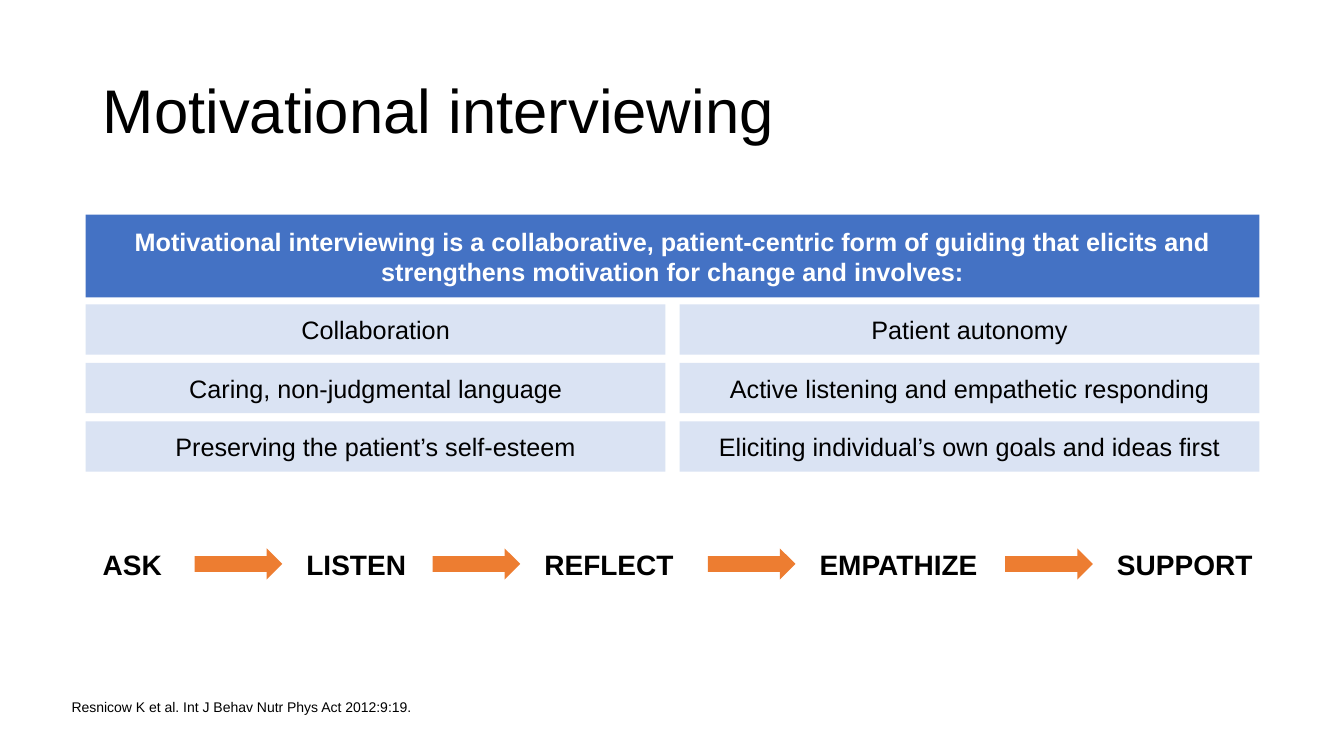
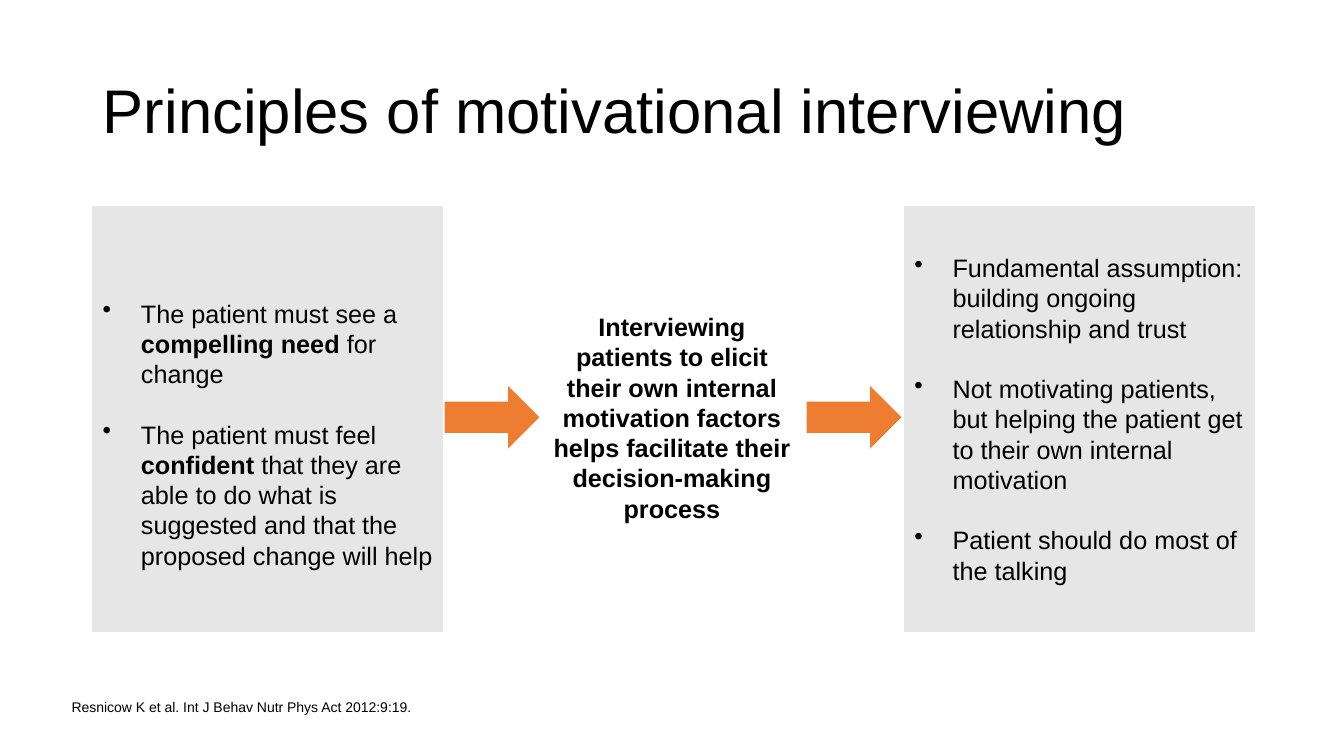
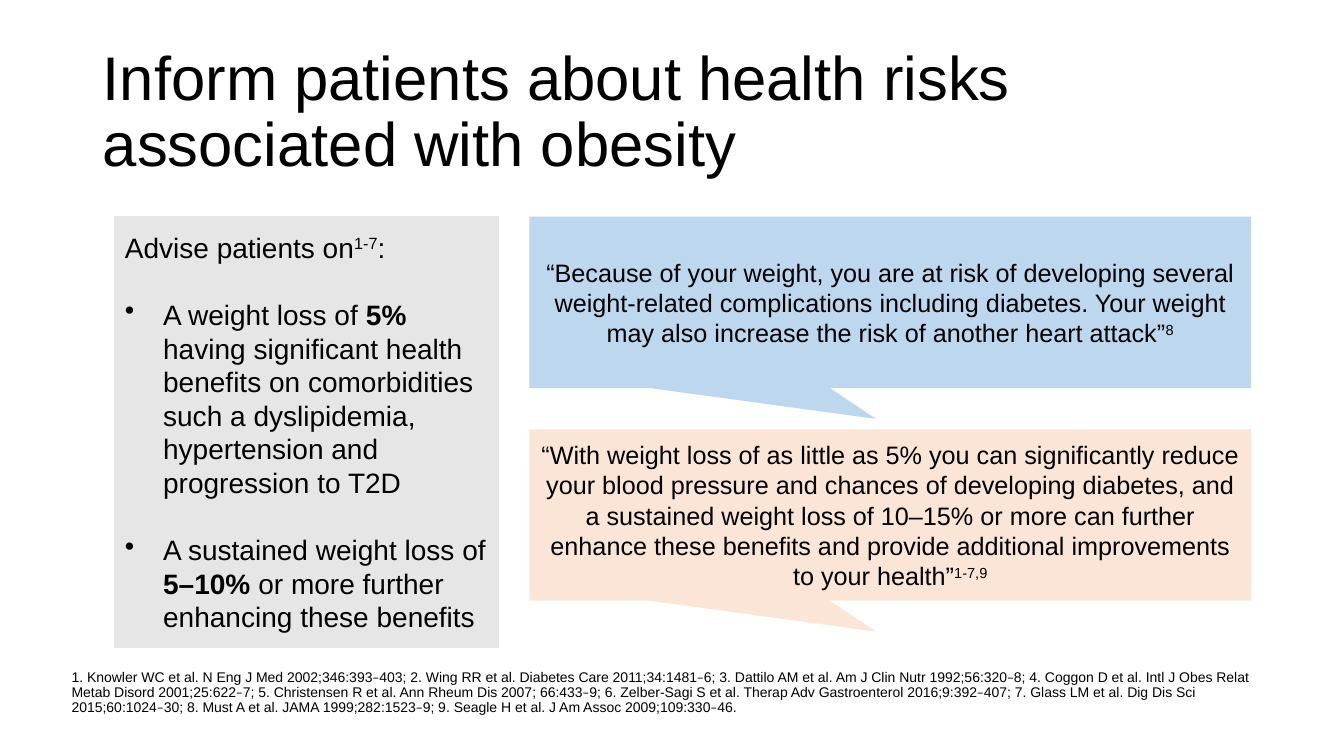
from dataclasses import dataclass

import pptx
import pptx.dml.color
import pptx.enum.shapes
import pptx.enum.text
import pptx.oxml
import pptx.oxml.ns
import pptx.presentation
import pptx.shapes.autoshape
import pptx.slide
import pptx.text.text
import pptx.util

Inches = pptx.util.Inches
Pt = pptx.util.Pt
Shapes = pptx.enum.shapes.MSO_SHAPE
Align = pptx.enum.text.PP_ALIGN
Anchor = pptx.enum.text.MSO_ANCHOR


@dataclass(frozen=True)
class Theme:
    """Colours, fonts and type sizes of the deck."""
    text: str = "000000"
    inverse: str = "FFFFFF"
    header: str = "4472C4"
    cell: str = "DAE3F3"
    arrow: str = "ED7D31"
    panel: str = "E7E6E6"
    risk: str = "BDD7EE"
    benefit: str = "FBE5D6"
    font: str = "Arial"
    dash_font: str = "Calibri"
    title_size: int = 44
    large_size: int = 20
    body_size: int = 18
    footnote_size: int = 10
    line_pitch: float = 1.2


THEME = Theme()


@dataclass(frozen=True)
class Box:
    """A rectangle on the slide, in inches."""
    left: float
    top: float
    width: float
    height: float

    def lengths(self) -> tuple[int, int, int, int]:
        return (Inches(self.left), Inches(self.top),
                Inches(self.width), Inches(self.height))


@dataclass(frozen=True)
class Run:
    text: str
    bold: bool = False
    superscript: bool = False
    font: str = THEME.font


@dataclass(frozen=True)
class Item:
    """A paragraph made of runs."""
    runs: tuple[Run, ...]
    bullet: bool = True


@dataclass(frozen=True)
class Step:
    label: str
    width: float


@dataclass(frozen=True)
class Callout:
    top: float
    fill: str
    quote: str
    references: str


TITLE_BOX = Box(0.92, 0.4, 11.5, 1.45)
FOOTNOTE_BOX = Box(0.71, 6.79, 11.71, 0.31)
INTERVIEW_SOURCE = "Resnicow K et al. Int J Behav Nutr Phys Act 2012:9:19."


# Text helpers

def color(value: str) -> pptx.dml.color.RGBColor:
    return pptx.dml.color.RGBColor.from_string(value)


def add_runs(paragraph: pptx.text.text._Paragraph, runs: tuple[Run, ...],
             size: int, ink: str = THEME.text) -> None:
    for part in runs:
        run = paragraph.add_run()
        run.text = part.text
        run.font.name = part.font
        run.font.size = Pt(size)
        run.font.bold = part.bold
        run.font.color.rgb = color(ink)
        if part.superscript:
            run._r.get_or_add_rPr().set("baseline", "30000")


def set_bullet(paragraph: pptx.text.text._Paragraph, bullet: bool) -> None:
    properties = paragraph._p.get_or_add_pPr()
    indent = Inches(0.38) if bullet else 0
    properties.set("marL", str(indent))
    properties.set("indent", str(-indent))
    tag = "a:buChar" if bullet else "a:buNone"
    mark = pptx.oxml.parse_xml(f"<{tag} {pptx.oxml.ns.nsdecls('a')}/>")
    if bullet:
        mark.set("char", "•")
    properties.append(mark)


def write_centered(text_frame: pptx.text.text.TextFrame, runs: tuple[Run, ...],
                   ink: str = THEME.text) -> None:
    text_frame.word_wrap = True
    text_frame.vertical_anchor = Anchor.MIDDLE
    paragraph = text_frame.paragraphs[0]
    paragraph.alignment = Align.CENTER
    add_runs(paragraph, runs, THEME.body_size, ink)


# Shape helpers

def add_filled(slide: pptx.slide.Slide, preset: Shapes, box: Box,
               fill: str) -> pptx.shapes.autoshape.Shape:
    shape = slide.shapes.add_shape(preset, *box.lengths())
    shape.shadow.inherit = False
    shape.fill.solid()
    shape.fill.fore_color.rgb = color(fill)
    shape.line.fill.background()
    return shape


def add_arrow(slide: pptx.slide.Slide, box: Box) -> None:
    add_filled(slide, Shapes.RIGHT_ARROW, box, THEME.arrow)


def add_block(slide: pptx.slide.Slide, box: Box, fill: str, text: str,
              ink: str = THEME.text, bold: bool = False) -> None:
    shape = add_filled(slide, Shapes.RECTANGLE, box, fill)
    write_centered(shape.text_frame, (Run(text, bold),), ink)


def add_panel(slide: pptx.slide.Slide, box: Box, items: tuple[Item, ...],
              size: int, top_margin: float = 0.05) -> None:
    """A grey panel whose paragraphs stand one line apart."""
    shape = add_filled(slide, Shapes.RECTANGLE, box, THEME.panel)
    shape.line.color.rgb = color(THEME.panel)
    shape.line.width = Pt(1)
    text_frame = shape.text_frame
    text_frame.word_wrap = True
    text_frame.vertical_anchor = Anchor.MIDDLE
    text_frame.margin_top = Inches(top_margin)
    for index, item in enumerate(items):
        paragraph = text_frame.add_paragraph() if index else text_frame.paragraphs[0]
        paragraph.alignment = Align.LEFT
        if index:
            paragraph.space_before = Pt(size * THEME.line_pitch)
        set_bullet(paragraph, item.bullet)
        add_runs(paragraph, item.runs, size)


def place(shape: pptx.shapes.autoshape.Shape, box: Box, anchor: Anchor,
          ) -> pptx.text.text._Paragraph:
    """Moves a placeholder and returns its prepared first paragraph."""
    shape.left, shape.top, shape.width, shape.height = box.lengths()
    text_frame = shape.text_frame
    text_frame.word_wrap = True
    text_frame.auto_size = pptx.enum.text.MSO_AUTO_SIZE.NONE
    text_frame.vertical_anchor = anchor
    paragraph = text_frame.paragraphs[0]
    paragraph.alignment = Align.LEFT
    paragraph.line_spacing = 0.9
    return paragraph


def add_slide(presentation: pptx.presentation.Presentation, title: str,
              footnote: str) -> pptx.slide.Slide:
    slide = presentation.slides.add_slide(presentation.slide_layouts[1])
    heading = place(slide.shapes.title, TITLE_BOX, Anchor.MIDDLE)
    add_runs(heading, (Run(title),), THEME.title_size)

    body = slide.placeholders[1]
    note = place(body, FOOTNOTE_BOX, Anchor.BOTTOM)
    text_frame = body.text_frame
    text_frame.margin_left = text_frame.margin_right = 0
    text_frame.margin_top = text_frame.margin_bottom = 0
    note.space_before = Pt(10)
    set_bullet(note, False)
    # Dashes in references have a font of their own
    for index, part in enumerate(footnote.split("–")):
        dash = (Run("–", font=THEME.dash_font),) if index else ()
        add_runs(note, dash + (Run(part),), THEME.footnote_size)
    return slide


# Slides

def build_overview(presentation: pptx.presentation.Presentation) -> None:
    slide = add_slide(presentation, "Motivational interviewing", INTERVIEW_SOURCE)

    # Definition and its two-column grid
    left, column_width, column_gap = 0.85, 5.75, 0.14
    add_block(slide, Box(left, 2.13, 2 * column_width + column_gap, 0.82), THEME.header,
              "Motivational interviewing is a collaborative, patient-centric form of "
              "guiding that elicits and strengthens motivation for change and involves:",
              THEME.inverse, bold=True)
    rows = (
        ("Collaboration", "Patient autonomy"),
        ("Caring, non-judgmental language", "Active listening and empathetic responding"),
        ("Preserving the patient’s self-esteem",
         "Eliciting individual’s own goals and ideas first"),
    )
    for row, texts in enumerate(rows):
        for column, text in enumerate(texts):
            box = Box(left + column * (column_width + column_gap), 3.02 + row * 0.58,
                      column_width, 0.5)
            add_block(slide, box, THEME.cell, text)

    # Chain of steps, with an arrow between neighbours
    steps = (Step("ASK", 0.87), Step("LISTEN", 1.21), Step("REFLECT", 1.58),
             Step("EMPATHIZE", 1.8), Step("SUPPORT", 1.58))
    arrow_width, gap = 0.87, 0.14
    position = 0.92
    for index, step in enumerate(steps):
        if index:
            add_arrow(slide, Box(position + gap, 5.44, arrow_width, 0.31))
            position += arrow_width + 2 * gap
        label = slide.shapes.add_textbox(*Box(position, 5.38, step.width, 0.44).lengths())
        label.text_frame.word_wrap = True
        add_runs(label.text_frame.paragraphs[0], (Run(step.label, bold=True),),
                 THEME.large_size)
        position += step.width


def build_principles(presentation: pptx.presentation.Presentation) -> None:
    slide = add_slide(presentation, "Principles of motivational interviewing",
                      INTERVIEW_SOURCE)
    needs = (
        Item((Run("The patient must see a "), Run("compelling need ", bold=True),
              Run("for change"))),
        Item((Run("The patient must feel "), Run("confident", bold=True),
              Run(" that they are able to do what is suggested and that the "
                  "proposed change will help"))),
    )
    assumptions = tuple(Item((Run(text),)) for text in (
        "Fundamental assumption: building ongoing relationship and trust",
        "Not motivating patients, but helping the patient get to their own "
        "internal motivation",
        "Patient should do most of the talking",
    ))
    # The left list starts one line lower
    for left, items, top_margin in ((0.92, needs, 0.35), (8.97, assumptions, 0.05)):
        add_panel(slide, Box(left, 2.05, 3.47, 4.21), items, THEME.body_size, top_margin)
    for left in (4.41, 8):
        add_arrow(slide, Box(left, 3.83, 0.94, 0.62))

    message = slide.shapes.add_textbox(*Box(5.35, 3.03, 2.63, 2.22).lengths())
    write_centered(message.text_frame, (
        Run("Interviewing patients to elicit their own internal motivation factors "
            "helps facilitate their decision-making process", bold=True),))


def build_risks(presentation: pptx.presentation.Presentation) -> None:
    slide = add_slide(
        presentation, "Inform patients about health risks associated with obesity",
        "1. Knowler WC et al. N Eng J Med 2002;346:393–403; "
        "2. Wing RR et al. Diabetes Care 2011;34:1481–6; "
        "3. Dattilo AM et al. Am J Clin Nutr 1992;56:320–8; "
        "4. Coggon D et al. Intl J Obes Relat Metab Disord 2001;25:622–7; "
        "5. Christensen R et al. Ann Rheum Dis 2007; 66:433–9; "
        "6. Zelber-Sagi S et al. Therap Adv Gastroenterol 2016;9:392–407; "
        "7. Glass LM et al. Dig Dis Sci 2015;60:1024–30; "
        "8. Must A et al. JAMA 1999;282:1523–9; "
        "9. Seagle H et al. J Am Assoc 2009;109:330–46.")

    # Advice
    advice = (
        Item((Run("Advise patients on"), Run("1-7", superscript=True), Run(":")),
             bullet=False),
        Item((Run("A weight loss of "), Run("5%", bold=True),
              Run(" having significant health benefits on comorbidities such a "
                  "dyslipidemia, hypertension and progression to T2D"))),
        Item((Run("A sustained weight loss of "), Run("5–10% ", bold=True),
              Run("or more further enhancing these benefits"))),
    )
    add_panel(slide, Box(1.14, 2.15, 3.8, 4.27), advice, THEME.large_size)

    # Things to say
    callouts = (
        Callout(2.15, THEME.risk,
                "“Because of your weight, you are at risk of developing several "
                "weight-related complications including diabetes. Your weight may also "
                "increase the risk of another heart attack”", "8"),
        Callout(4.26, THEME.benefit,
                "“With weight loss of as little as 5% you can significantly reduce your "
                "blood pressure and chances of developing diabetes, and a sustained "
                "weight loss of 10–15% or more can further enhance these benefits and "
                "provide additional improvements to your health”", "1-7,9"),
    )
    for callout in callouts:
        shape = add_filled(slide, Shapes.RECTANGULAR_CALLOUT,
                           Box(5.25, callout.top, 7.16, 1.7), callout.fill)
        shape.adjustments[0] = -0.02
        shape.adjustments[1] = 0.68
        write_centered(shape.text_frame, (
            Run(callout.quote), Run(callout.references, superscript=True)))


def main() -> None:
    presentation = pptx.Presentation()
    presentation.slide_width = Inches(13.33)
    presentation.slide_height = Inches(7.5)
    build_overview(presentation)
    build_principles(presentation)
    build_risks(presentation)
    presentation.save("out.pptx")


if __name__ == "__main__":
    main()
